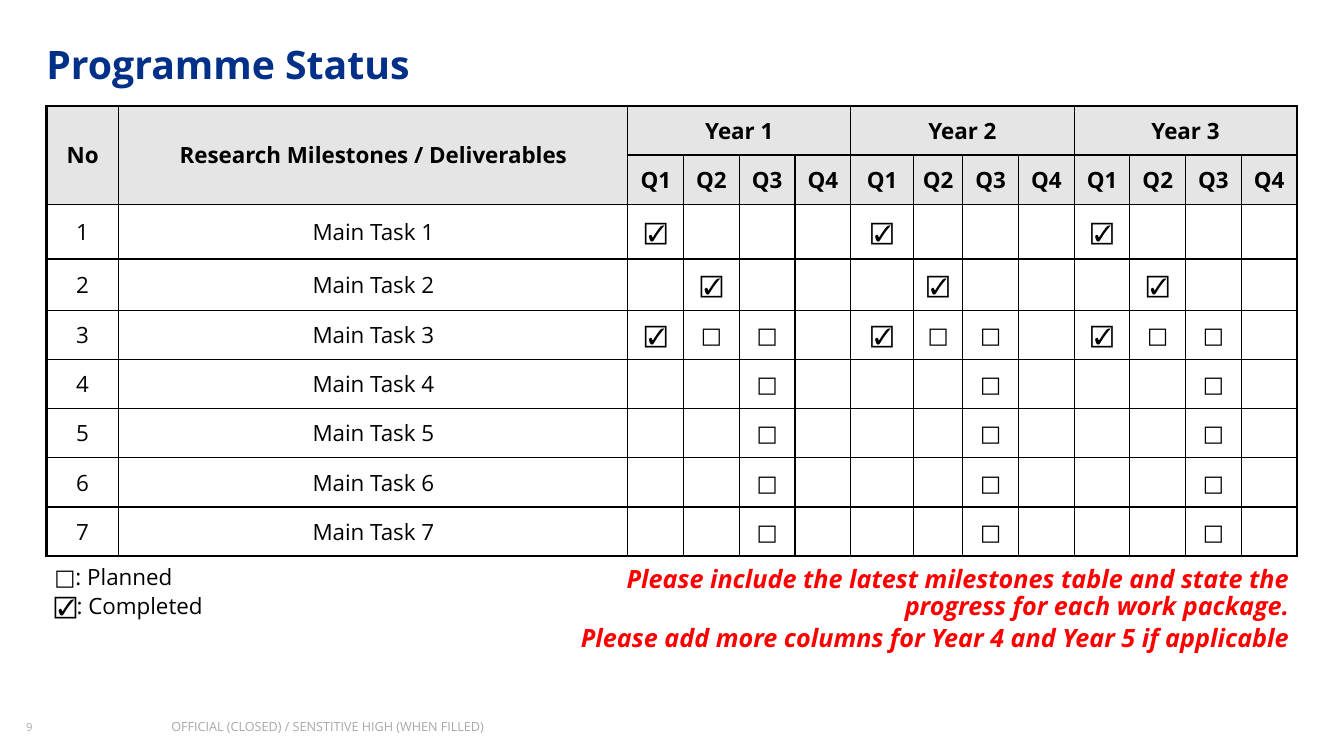
from dataclasses import dataclass

from lxml import etree
from pptx import Presentation
from pptx.dml.color import RGBColor
from pptx.enum import text as t
from pptx.oxml import ns
from pptx.util import Pt


@dataclass(frozen=True)
class Theme:
    font: str = "Open Sans"
    navy: str = "003087"
    black: str = "000000"
    red: str = "FF0000"
    gray: str = "767171"
    head: str = "E5E5E5"
    title: float = 28
    note: float = 18
    body: float = 16
    foot: float = 9
    page: float = 8


THEME = Theme()
LEFT, MID, RIGHT = t.PP_ALIGN.LEFT, t.PP_ALIGN.CENTER, t.PP_ALIGN.RIGHT
DONE, PLAN = "☑", "□"

# Quarters marked for each task, the same in every year
MARKS = [
    {1: DONE},
    {2: DONE},
    {1: DONE, 2: PLAN, 3: PLAN},
    *[{3: PLAN}] * 4,
]


def style(para, size, color, bold=False, slant=False, align=LEFT):
    para.alignment = align
    for run in para.runs:
        font = run.font
        font.name, font.size = THEME.font, Pt(size)
        font.bold, font.italic = bold, slant
        font.color.rgb = RGBColor.from_string(color)


def add_text(slide, box, lines, size, color, pad=(0, 0), lead=1.0, gap=0, **look):
    frame = slide.shapes.add_textbox(*map(Pt, box)).text_frame
    frame.word_wrap = True
    frame.margin_left = frame.margin_right = Pt(pad[0])
    frame.margin_top = frame.margin_bottom = Pt(pad[1])
    frame.text = "\n".join(lines)
    for i, para in enumerate(frame.paragraphs):
        para.line_spacing = lead
        if i:
            para.space_before = Pt(gap)
        style(para, size, color, **look)
    return frame


def fade(frame, share):
    """Make the text colour partly transparent."""
    for clr in frame._txBody.iter(ns.qn("a:srgbClr")):
        etree.SubElement(clr, ns.qn("a:alpha"), val=str(share * 1000))


def set_edge(cell, **sides):
    props = cell._tc.get_or_add_tcPr()
    for side, width in sides.items():
        line = etree.SubElement(props, ns.qn(f"a:ln{side}"), w=str(Pt(width)))
        fill = etree.SubElement(line, ns.qn("a:solidFill"))
        etree.SubElement(fill, ns.qn("a:srgbClr"), val=THEME.black)


def fill_cell(cell, words, bold=False):
    cell.text = words
    style(cell.text_frame.paragraphs[0], THEME.body, THEME.black, bold, align=MID)


def add_status(slide, box):
    quarter = 39.8
    cols = [51.8, 363.6] + [quarter] * 12
    cols[6:8] = [quarter + 5, quarter - 4.6]
    rows = [35.1] * 9
    rows[2:4] = [39.2, 36.8]
    last = len(rows) - 1
    table = slide.shapes.add_table(len(rows), len(cols), *map(Pt, box)).table
    table.first_row = table.horz_banding = False
    for col, width in zip(table.columns, cols):
        col.width = Pt(width)
    for row, height in zip(table.rows, rows):
        row.height = Pt(height)

    # Borders and fills
    for r in range(len(rows)):
        for c in range(len(cols)):
            cell = table.cell(r, c)
            cell.vertical_anchor = t.MSO_ANCHOR.MIDDLE
            set_edge(cell, L=1 if c else 2, R=1, T=1 if r else 2, B=2 if r == last else 1)
            if r < 2:
                cell.fill.solid()
                cell.fill.fore_color.rgb = RGBColor.from_string(THEME.head)
            else:
                cell.fill.background()

    # Header
    for c, words in enumerate(["No", "Research Milestones / Deliverables"]):
        table.cell(0, c).merge(table.cell(1, c))
        fill_cell(table.cell(0, c), words, bold=True)
    for year in range(3):
        first = 2 + 4 * year
        table.cell(0, first).merge(table.cell(0, first + 3))
        fill_cell(table.cell(0, first), f"Year {year + 1}", bold=True)
        for q in range(4):
            cell = table.cell(1, first + q)
            cell.margin_left = cell.margin_right = 0
            fill_cell(cell, f"Q{q + 1}", bold=True)

    # Tasks
    for n, marks in enumerate(MARKS, 1):
        fill_cell(table.cell(n + 1, 0), str(n))
        fill_cell(table.cell(n + 1, 1), f"Main Task {n}")
        for year in range(3):
            for q, mark in marks.items():
                fill_cell(table.cell(n + 1, 1 + 4 * year + q), mark)


def add_notes(slide, box):
    x, y, w, h = box
    look = dict(pad=(7.2, 3.6), lead=0.9)
    # Legend
    add_text(slide, (x, y, 284, 50), [f"{PLAN}: Planned", f"{DONE}: Completed"],
             THEME.body, THEME.black, gap=3.2, **look)
    # Advice
    wide = 525.6
    add_text(slide, (x + w - wide, y, wide, h), [
        "Please include the latest milestones table and state the progress for each work package.",
        "Please add more columns for Year 4 and Year 5 if applicable",
    ], THEME.note, THEME.red, gap=3.6, bold=True, slant=True, align=RIGHT, **look)


def add_footer(slide, box):
    x, y, w, h = box
    page = add_text(slide, (x, y, 57, h), ["9"], THEME.page, THEME.gray, lead=1.1)
    label = add_text(slide, (x + 103.7, y, w - 103.7, h),
                     ["OFFICIAL (CLOSED) / SENSTITIVE HIGH (WHEN FILLED)"],
                     THEME.foot, THEME.gray)
    for frame in (page, label):
        fade(frame, 61)


def main():
    deck = Presentation()
    deck.slide_width, deck.slide_height = Pt(960), Pt(540)
    slide = deck.slides.add_slide(deck.slide_layouts[6])
    add_text(slide, (33.1, 25.2, 793.4, 37.4), ["Programme Status"],
             THEME.title, THEME.navy, lead=1.1, bold=True)
    add_status(slide, (33.1, 75.6, 894.2, 321.7))
    add_notes(slide, (31.7, 401, 896.4, 77))
    add_footer(slide, (18.7, 513.4, 487.4, 13.7))
    deck.save("out.pptx")


if __name__ == "__main__":
    main()
